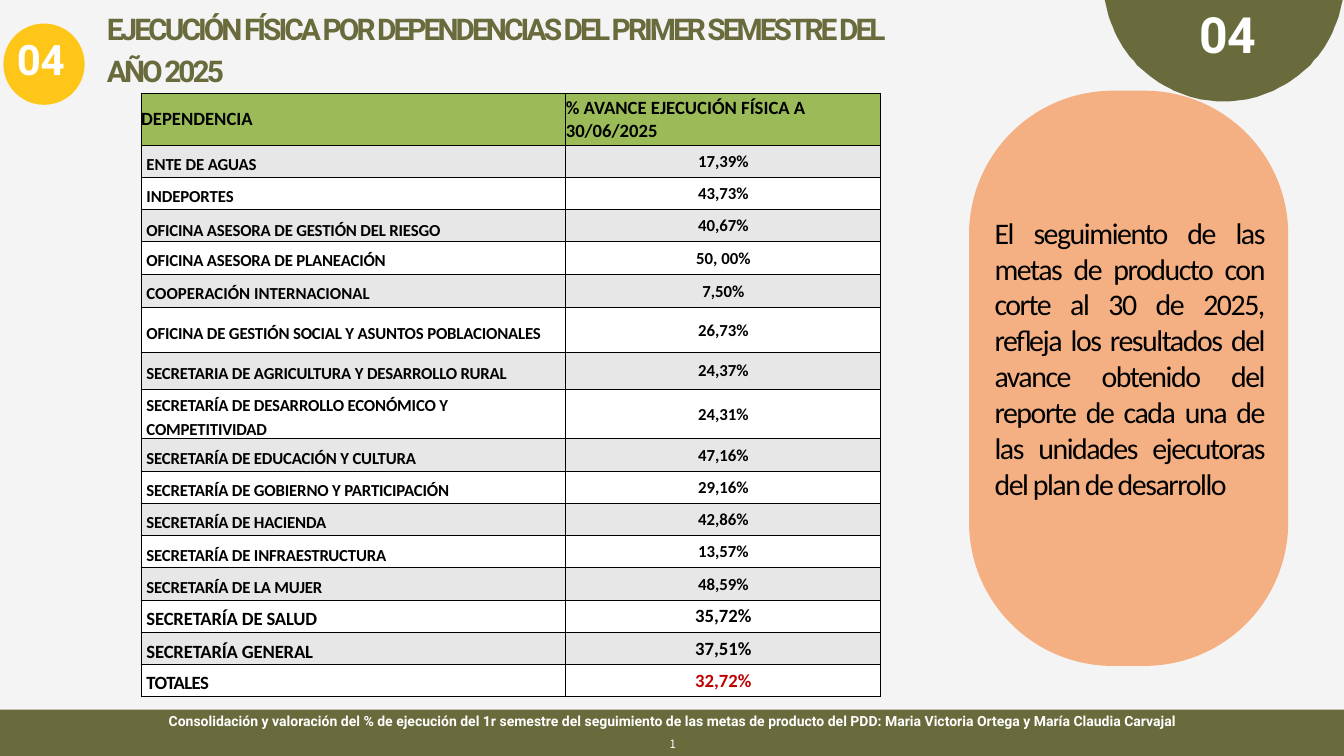
"""Build the slide on physical execution by department for the first semester of 2025."""
import math
from dataclasses import dataclass

from lxml import etree
from pptx import Presentation
from pptx.dml.color import RGBColor
from pptx.enum.shapes import MSO_SHAPE
from pptx.enum.text import MSO_ANCHOR, PP_ALIGN
from pptx.oxml.ns import qn
from pptx.util import Pt

EMU_PER_PX = 9144
PT_PER_PX = 0.72
LEFT, CENTER, JUSTIFY = PP_ALIGN.LEFT, PP_ALIGN.CENTER, PP_ALIGN.JUSTIFY
MIDDLE = MSO_ANCHOR.MIDDLE
OVAL, RECTANGLE, ROUNDED = MSO_SHAPE.OVAL, MSO_SHAPE.RECTANGLE, MSO_SHAPE.ROUNDED_RECTANGLE

COLORS = {
    "background": "F4F4F4",
    "olive": "6A6B3C",
    "yellow": "FFC61A",
    "peach": "F4B083",
    "green": "9BBB59",
    "band": "E7E7E7",
    "white": "FFFFFF",
    "black": "000000",
    "red": "C00000",
}


@dataclass(frozen=True)
class Style:
    size: float
    color: str = "black"
    font: str = "Calibri"
    bold: bool = True
    spacing: float = 0
    align: PP_ALIGN = LEFT
    before: float = 0
    line: float = 1.0
    baseline: int = 0


@dataclass(frozen=True)
class TextBox:
    left: int
    top: int
    width: int
    height: int
    inset: int
    paragraphs: tuple[tuple[str, Style], ...]


@dataclass(frozen=True)
class Panel:
    kind: MSO_SHAPE
    left: int
    top: int
    width: int
    height: int
    color: str


@dataclass(frozen=True)
class Department:
    name: str
    progress: str
    inset: int
    height: int = 48
    size: int = 18
    spacing: float = -0.2
    color: str = "black"


PANELS = (
    Panel(RECTANGLE, 0, 1056, 2000, 69, "olive"),
    Panel(OVAL, 5, 35, 121, 121, "yellow"),
    Panel(ROUNDED, 1442, 135, 475, 856, "peach"),
)
TEXTS = (
    TextBox(1785, 3, 95, 92, 2, (
        ("04", Style(53.5, "white", "Roboto", spacing=-0.6, before=1.2)),)),
    TextBox(25, 49, 81, 78, 1, (
        ("04", Style(45, "white", "Roboto", spacing=-0.2, before=1)),)),
    TextBox(159, 7, 1235, 121, 1, (
        ("EJECUCIÓN FÍSICA POR DEPENDENCIAS DEL PRIMER SEMESTRE DEL AÑO 2025",
         Style(32, "olive", "Roboto", spacing=-3.2, before=1, line=1.16)),)),
    TextBox(1480, 317, 401, 432, 2, (
        ("El seguimiento de las metas de producto con corte al 30 de 2025, refleja los "
         "resultados del avance obtenido del reporte de cada una de las unidades "
         "ejecutoras del plan de desarrollo",
         Style(32, bold=False, spacing=-1.6, align=JUSTIFY, before=1.1)),)),
    TextBox(5, 1054, 1992, 71, 6, (
        ("Consolidación y valoración del % de ejecución del 1r semestre del seguimiento "
         "de las metas de producto del PDD: Maria Victoria Ortega y María Claudia Carvajal",
         Style(15, "white", "Roboto", align=CENTER, before=4.2)),
        ("1", Style(21, "white", "Noto Sans CJK TC", False, align=CENTER, before=3.2,
                    baseline=16000)))),
)
HEADINGS = ("DEPENDENCIA", "% AVANCE EJECUCIÓN FÍSICA A 30/06/2025")
DEPARTMENTS = (
    Department("ENTE DE AGUAS", "17,39%", 9, spacing=-0.1),
    Department("INDEPORTES", "43,73%", 10, spacing=-0.1),
    Department("OFICINA ASESORA DE GESTIÓN DEL RIESGO", "40,67%", 15),
    Department("OFICINA ASESORA DE PLANEACIÓN", "50, 00%", 9),
    Department("COOPERACIÓN INTERNACIONAL", "7,50%", 4, 50, spacing=0),
    Department("OFICINA DE GESTIÓN SOCIAL Y ASUNTOS POBLACIONALES", "26,73%", 4, 67),
    Department("SECRETARIA DE AGRICULTURA Y DESARROLLO RURAL", "24,37%", 4, 54),
    Department("SECRETARÍA DE DESARROLLO ECONÓMICO Y COMPETITIVIDAD", "24,31%", 4, 67),
    Department("SECRETARÍA DE EDUCACIÓN Y CULTURA", "47,16%", 10),
    Department("SECRETARÍA DE GOBIERNO Y PARTICIPACIÓN", "29,16%", 4),
    Department("SECRETARÍA DE HACIENDA", "42,86%", 11),
    Department("SECRETARÍA DE INFRAESTRUCTURA", "13,57%", 11),
    Department("SECRETARÍA DE LA MUJER", "48,59%", 10),
    Department("SECRETARÍA DE SALUD", "35,72%", 10, size=20),
    Department("SECRETARÍA GENERAL", "37,51%", 10, size=20),
    Department("TOTALES", "32,72%", 8, size=20, spacing=-0.6, color="red"),
)


def px(*lengths: int) -> list[int]:
    """Turn px lengths into EMU."""
    return [length * EMU_PER_PX for length in lengths]


def rgb(name: str) -> RGBColor:
    """Look up a named colour."""
    return RGBColor.from_string(COLORS[name])


def paint(shape, color: str) -> None:
    """Give a shape a plain fill without line or shadow."""
    shape.shadow.inherit = False
    shape.fill.solid()
    shape.fill.fore_color.rgb = rgb(color)
    shape.line.fill.background()


def format_paragraph(para, style: Style) -> None:
    """Apply a style to a paragraph and its runs."""
    para.alignment = style.align
    para.space_before = Pt(style.before)
    para.line_spacing = style.line
    for span in para.runs:
        span.font.name = style.font
        span.font.size = Pt(style.size)
        span.font.bold = style.bold
        span.font.color.rgb = rgb(style.color)
        properties = span._r.get_or_add_rPr()
        properties.set("spc", str(round(style.spacing * 100)))
        if style.baseline:
            properties.set("baseline", str(style.baseline))


def draw_panel(page, panel: Panel) -> None:
    """Draw a filled preset shape."""
    shape = page.shapes.add_shape(
        panel.kind, *px(panel.left, panel.top, panel.width, panel.height))
    paint(shape, panel.color)
    if panel.kind == ROUNDED:
        shape.adjustments[0] = 0.45


def draw_corner_arc(page, center_x: int, center_y: int, radius: int, steps: int = 60) -> None:
    """Draw the part of a circle that lies below the top edge of the slide."""
    start = math.asin(-center_y / radius)
    angles = [start + (math.pi - 2 * start) * step / steps for step in range(steps + 1)]
    points = [(center_x + radius * math.cos(angle), center_y + radius * math.sin(angle))
              for angle in angles]
    builder = page.shapes.build_freeform(*points[0], scale=EMU_PER_PX)
    builder.add_line_segments(points[1:], close=True)
    paint(builder.convert_to_shape(), "olive")


def draw_text(page, text: TextBox) -> None:
    """Draw a text box with its styled paragraphs."""
    box = page.shapes.add_textbox(*px(text.left, text.top, text.width, text.height))
    frame = box.text_frame
    frame.word_wrap = True
    frame.margin_left = frame.margin_right = frame.margin_bottom = 0
    frame.margin_top = text.inset * EMU_PER_PX
    frame.text = "\n".join(words for words, _ in text.paragraphs)
    for para, (_, style) in zip(frame.paragraphs, text.paragraphs):
        format_paragraph(para, style)


def fill_cell(cell, words: str, fill: str, style: Style, left: int = 0, top: int = 0) -> None:
    """Write, fill and border one table cell."""
    cell.text_frame.text = words
    format_paragraph(cell.text_frame.paragraphs[0], style)
    cell.vertical_anchor = MIDDLE
    cell.margin_left, cell.margin_top = px(left, top)
    cell.margin_right = cell.margin_bottom = 0
    cell.fill.solid()
    cell.fill.fore_color.rgb = rgb(fill)
    properties = cell._tc.get_or_add_tcPr()
    for index, side in enumerate(("lnL", "lnR", "lnT", "lnB")):
        border = etree.Element(qn(f"a:{side}"), w=str(Pt(1)))
        solid = etree.SubElement(border, qn("a:solidFill"))
        etree.SubElement(solid, qn("a:srgbClr"), val=COLORS["black"])
        properties.insert(index, border)


def draw_table(page) -> None:
    """Draw the table of progress by department."""
    heights = [77] + [department.height for department in DEPARTMENTS]
    table = page.shapes.add_table(
        len(heights), 2, *px(210, 139, 1100, sum(heights))).table
    table.first_row = table.horz_banding = False
    for column, width in zip(table.columns, px(632, 468)):
        column.width = width
    for row, height in zip(table.rows, px(*heights)):
        row.height = height
    for index, heading in enumerate(HEADINGS):
        fill_cell(table.cell(0, index), heading, "green", Style(20))
    for index, item in enumerate(DEPARTMENTS, start=1):
        fill = "band" if index % 2 else "white"
        name_style = Style(item.size, spacing=item.spacing, before=round(item.inset * PT_PER_PX, 1),
                           line=1.17 if item.inset == 4 else 1.0)
        fill_cell(table.cell(index, 0), item.name, fill, name_style, 8, item.inset)
        fill_cell(table.cell(index, 1), item.progress, fill,
                  Style(item.size, item.color, align=CENTER), 1, 1)


def main() -> None:
    """Build and save the deck."""
    deck = Presentation()
    deck.slide_width, deck.slide_height = px(2000, 1125)
    page = deck.slides.add_slide(deck.slide_layouts[6])
    page.background.fill.solid()
    page.background.fill.fore_color.rgb = rgb("background")
    draw_corner_arc(page, 1821, -28, 179)
    for panel in PANELS:
        draw_panel(page, panel)
    for text in TEXTS:
        draw_text(page, text)
    draw_table(page)
    deck.save("out.pptx")


if __name__ == "__main__":
    main()
